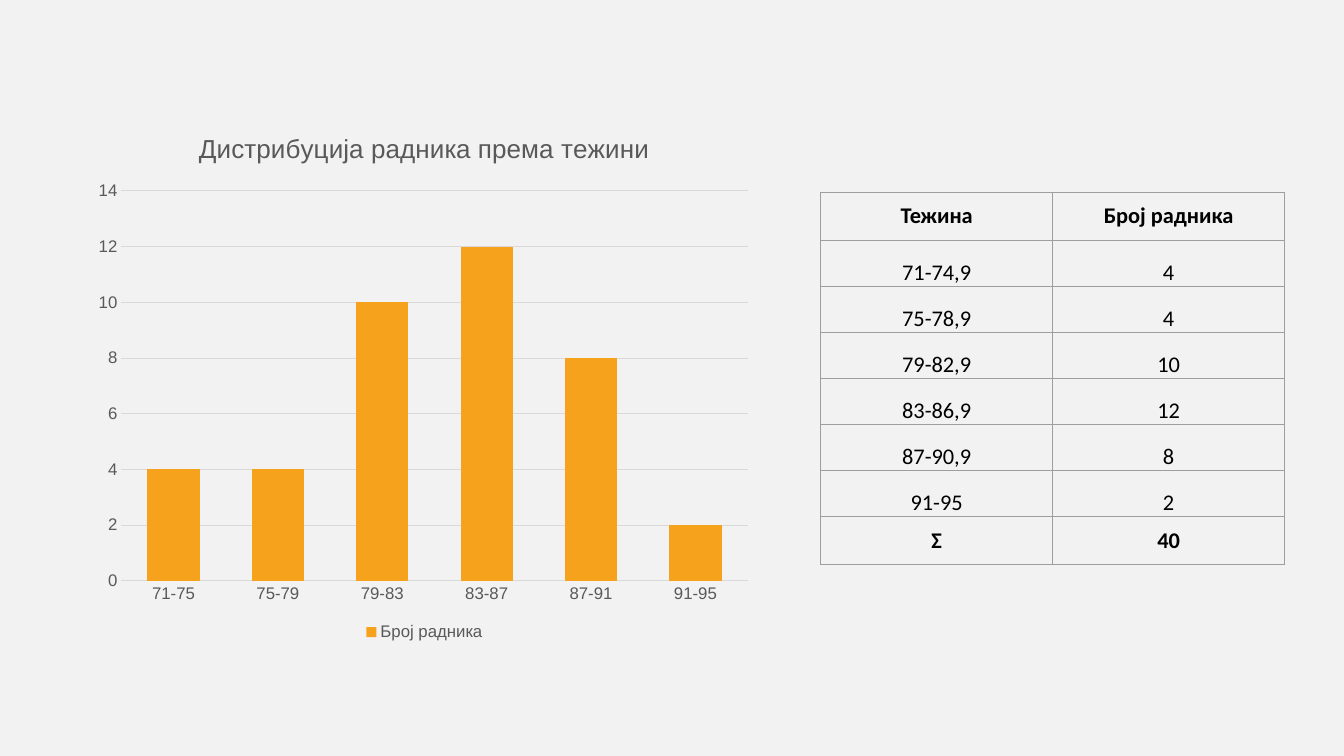
"""Build a slide with a column chart and a table of workers by weight."""
from dataclasses import dataclass
from typing import Any

from lxml.etree import SubElement
from pptx import Presentation
from pptx.chart.data import CategoryChartData as ChartData
from pptx.dml.color import RGBColor as Rgb
from pptx.enum.chart import XL_CHART_TYPE as Kind
from pptx.enum.chart import XL_LEGEND_POSITION as Spot
from pptx.enum.chart import XL_TICK_MARK as Tick
from pptx.enum.text import MSO_ANCHOR as Anchor
from pptx.enum.text import PP_ALIGN as Align
from pptx.oxml.ns import qn
from pptx.util import Emu, Pt

SCALE = 9144
COLORS = {"back": "F2F2F2", "ink": "000000", "label": "595959",
          "grid": "D9D9D9", "edge": "9E9E9E", "bar": "F6A21D"}
COUNT = "Број радника"
TITLE = "Дистрибуција радника према тежини"
PLOT = {"x": 0.05, "y": 0.15, "w": 0.93, "h": 0.73}


@dataclass(frozen=True)
class Box:
    left: int
    top: int
    width: int
    height: int

    def emu(self) -> list[Emu]:
        return [px(n) for n in (self.left, self.top, self.width, self.height)]


@dataclass(frozen=True)
class Band:
    span: str
    label: str
    count: int


BANDS = [
    Band("71-75", "71-74,9", 4),
    Band("75-79", "75-78,9", 4),
    Band("79-83", "79-82,9", 10),
    Band("83-87", "83-86,9", 12),
    Band("87-91", "87-90,9", 8),
    Band("91-95", "91-95", 2),
]


def px(size: int) -> Emu:
    return Emu(size * SCALE)


def color(name: str) -> Rgb:
    return Rgb.from_string(COLORS[name])


def set_font(font: Any, face: str, size: float, ink: str, bold: bool = False) -> None:
    font.name, font.size, font.bold = face, Pt(size), bold
    font.color.rgb = color(ink)


def set_line(line: Any) -> None:
    line.color.rgb = color("grid")
    line.width = Pt(0.75)


def set_plot(chart: Any) -> None:
    area = chart.element.find(".//" + qn("c:plotArea"))
    for old in area.findall(qn("c:layout")):
        area.remove(old)
    layout = SubElement(area, qn("c:layout"))
    area.insert(0, layout)
    manual = SubElement(layout, qn("c:manualLayout"))
    SubElement(manual, qn("c:layoutTarget"), val="inner")
    for side in "xy":
        SubElement(manual, qn(f"c:{side}Mode"), val="edge")
    for side, part in PLOT.items():
        SubElement(manual, qn(f"c:{side}"), val=str(part))


def draw_chart(slide: Any, box: Box) -> None:
    data = ChartData()
    data.categories = [band.span for band in BANDS]
    data.add_series(COUNT, [band.count for band in BANDS])
    chart = slide.shapes.add_chart(Kind.COLUMN_CLUSTERED, *box.emu(), data).chart
    set_font(chart.font, "Arial", 10, "ink")

    run = chart.chart_title.text_frame.paragraphs[0].add_run()
    run.text = TITLE
    set_font(run.font, "Arial", 18.6, "label")
    chart.chart_title.include_in_layout = False

    chart.has_legend = True
    chart.legend.position = Spot.BOTTOM
    chart.legend.include_in_layout = False
    set_font(chart.legend.font, "Arial", 12, "label")

    for axis in (chart.category_axis, chart.value_axis):
        axis.major_tick_mark = axis.minor_tick_mark = Tick.NONE
        set_font(axis.tick_labels.font, "Arial", 12, "label")
    set_line(chart.category_axis.format.line)
    scale = chart.value_axis
    scale.minimum_scale, scale.maximum_scale, scale.major_unit = 0, 14, 2
    scale.format.line.fill.background()
    set_line(scale.major_gridlines.format.line)

    plot = chart.plots[0]
    plot.gap_width, plot.overlap, plot.vary_by_categories = 100, -27, False
    fill = plot.series[0].format.fill
    fill.solid()
    fill.fore_color.rgb = color("bar")
    set_plot(chart)


def set_edges(cell: Any) -> None:
    props = cell._tc.get_or_add_tcPr()
    for side in "LRTB":
        line = SubElement(props, qn(f"a:ln{side}"), w=str(Pt(0.75)))
        fill = SubElement(line, qn("a:solidFill"))
        SubElement(fill, qn("a:srgbClr"), val=COLORS["edge"])


def fill_cell(cell: Any, text: str, bold: bool) -> None:
    set_edges(cell)
    cell.fill.background()
    pad = px(10 if bold else 1)
    cell.margin_left = cell.margin_right = cell.margin_top = pad
    cell.margin_bottom = pad if bold else px(0)
    cell.vertical_anchor = Anchor.TOP if bold else Anchor.BOTTOM
    para = cell.text_frame.paragraphs[0]
    para.alignment = Align.CENTER
    run = para.add_run()
    run.text = text
    set_font(run.font, "Calibri", 16, "ink", bold)


def draw_table(slide: Any, box: Box) -> None:
    total = sum(band.count for band in BANDS)
    rows = [("Тежина", COUNT)]
    rows += [(band.label, str(band.count)) for band in BANDS]
    rows.append(("Σ", str(total)))
    table = slide.shapes.add_table(len(rows), 2, *box.emu()).table
    table.first_row = table.horz_banding = False
    for at, row in enumerate(rows):
        for col, text in enumerate(row):
            fill_cell(table.cell(at, col), text, at in (0, len(rows) - 1))


def main() -> None:
    deck = Presentation()
    deck.slide_width, deck.slide_height = px(1333), px(750)
    slide = deck.slides.add_slide(deck.slide_layouts[6])
    back = slide.background.fill
    back.solid()
    back.fore_color.rgb = color("back")
    draw_table(slide, Box(814, 191, 460, 366))
    draw_chart(slide, Box(87, 110, 668, 530))
    deck.save("out.pptx")


if __name__ == "__main__":
    main()
